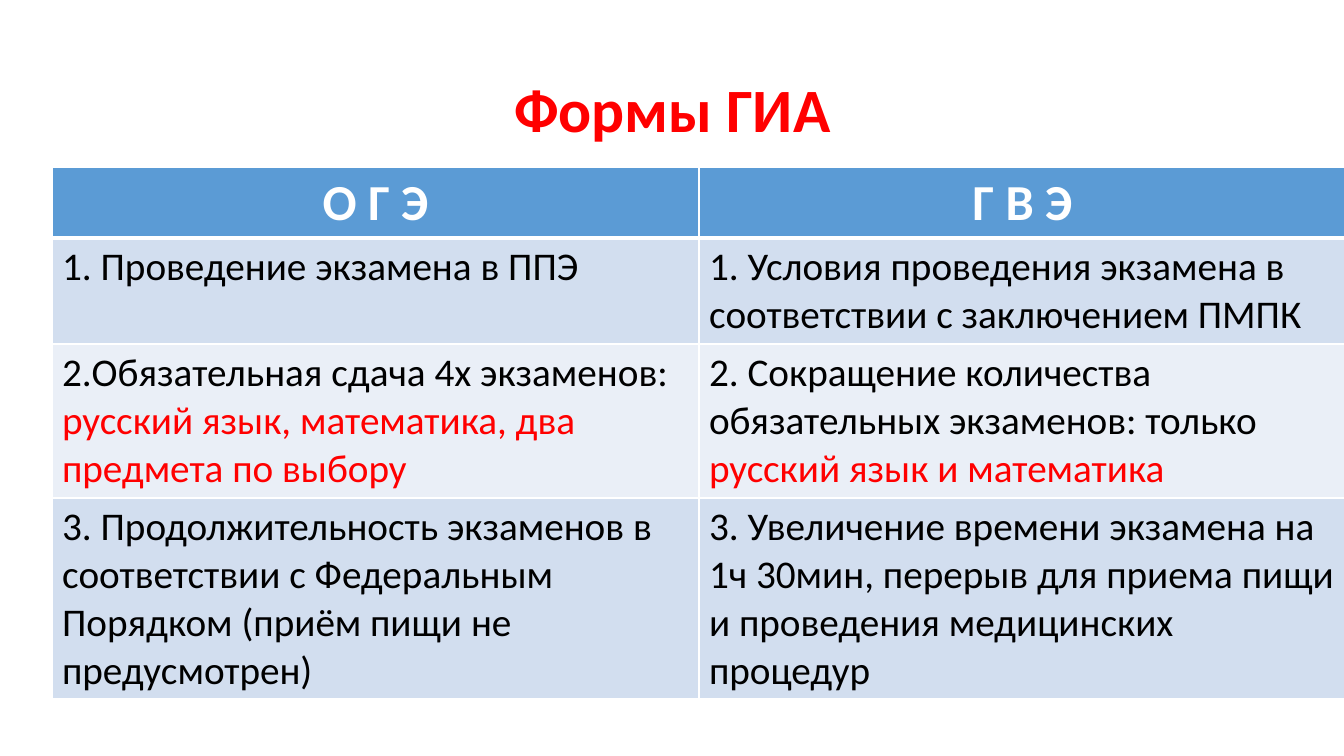
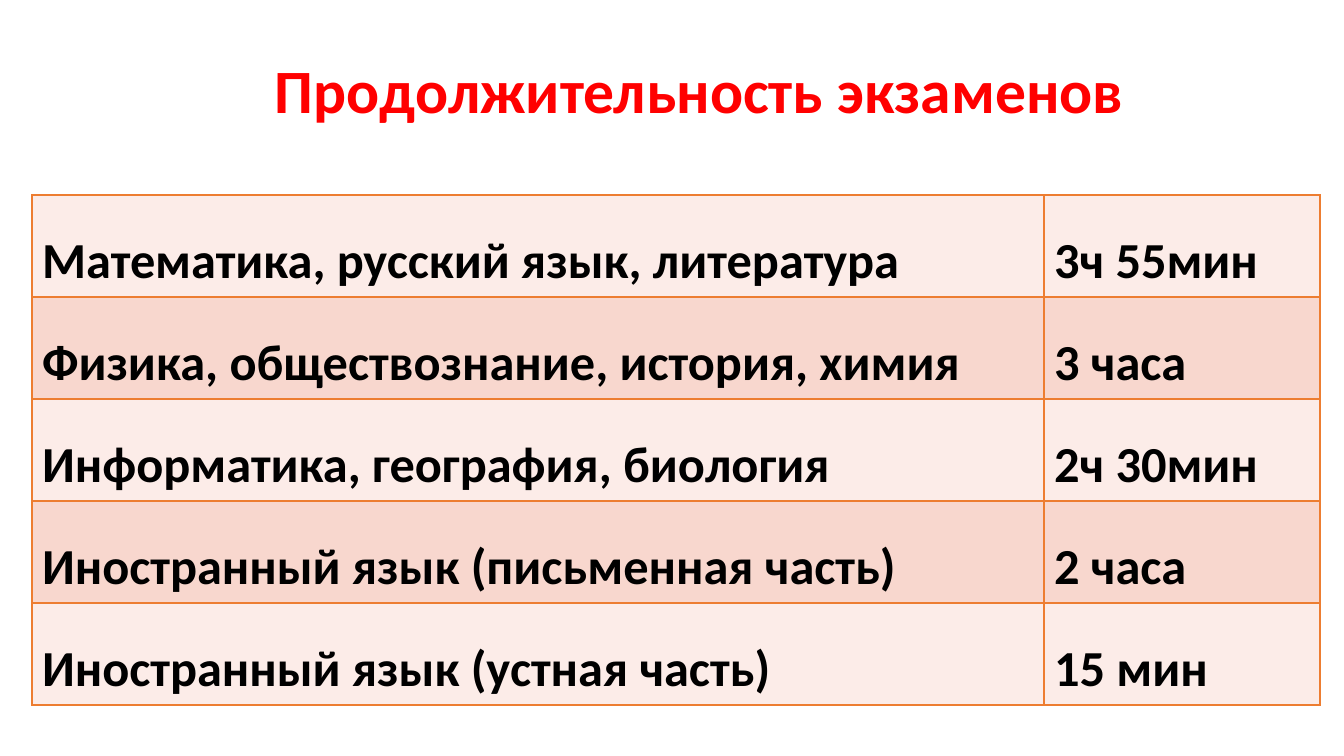
from dataclasses import dataclass

from lxml import etree
from pptx import Presentation
from pptx.dml.color import RGBColor
from pptx.enum.text import MSO_ANCHOR, PP_ALIGN
from pptx.oxml.ns import qn
from pptx.util import Pt

LEFT, CENTER = PP_ALIGN.LEFT, PP_ALIGN.CENTER
MIDDLE = MSO_ANCHOR.MIDDLE
SLIDE_WIDTH, SLIDE_HEIGHT = 1344, 756
EMU_PER_PX = 12192000 / SLIDE_WIDTH
EMU_PER_POINT = 12700
BLANK_LAYOUT = 6


@dataclass(frozen=True)
class Theme:
    font: str = "Calibri"
    accent: str = "FF0000"
    text: str = "000000"
    white: str = "FFFFFF"
    header_fill: str = "5B9BD5"
    blue_bands: tuple = ("D2DEEF", "EAEFF7")
    orange_bands: tuple = ("FCECE8", "F8D7CE")
    orange_line: str = "ED7D31"
    title_size: int = 44
    large_size: int = 36
    body_size: int = 28
    thin_line: int = 1
    thick_line: int = 3


THEME = Theme()

FORMS_HEADER = ("О Г Э", "Г В Э")
# Each cell is a list of (text, colour) runs.
FORMS_ROWS = [
    ([("1. Проведение экзамена в ППЭ", THEME.text)],
     [("1. Условия проведения экзамена в соответствии с заключением ПМПК", THEME.text)]),
    ([("2.Обязательная сдача 4х экзаменов: ", THEME.text),
      ("русский язык, математика, два предмета по выбору", THEME.accent)],
     [("2. Сокращение количества обязательных экзаменов: только ", THEME.text),
      ("русский язык и математика", THEME.accent)]),
    ([("3. Продолжительность экзаменов в соответствии с Федеральным Порядком "
       "(приём пищи не предусмотрен)", THEME.text)],
     [("3. Увеличение времени экзамена на 1ч 30мин, перерыв для приема пищи "
       "и проведения медицинских процедур", THEME.text)]),
]
DURATIONS = [
    ("Математика, русский язык, литература", "3ч 55мин"),
    ("Физика, обществознание, история, химия", "3 часа"),
    ("Информатика, география, биология", "2ч 30мин"),
    ("Иностранный язык (письменная часть)", "2 часа"),
    ("Иностранный язык (устная часть)", "15 мин"),
]


def px(length):
    return round(length * EMU_PER_PX)


def write_runs(paragraph, runs, size, bold, align=LEFT, spacing=1.0):
    paragraph.alignment = align
    paragraph.line_spacing = spacing
    for text, color in runs:
        run = paragraph.add_run()
        run.text = text
        run.font.name = THEME.font
        run.font.size = Pt(size)
        run.font.bold = bold
        run.font.color.rgb = RGBColor.from_string(color)


def add_title(slide, box, text, align):
    shape = slide.shapes.add_textbox(*map(px, box))
    frame = shape.text_frame
    frame.word_wrap = True
    frame.vertical_anchor = MIDDLE
    write_runs(frame.paragraphs[0], [(text, THEME.accent)], THEME.title_size, True, align, 0.9)


def set_borders(cell, color, top=THEME.thin_line, bottom=THEME.thin_line):
    """Draw the four borders; the lines must precede the fill in the cell properties."""
    properties = cell._tc.get_or_add_tcPr()
    widths = {"lnL": THEME.thin_line, "lnR": THEME.thin_line, "lnT": top, "lnB": bottom}
    for index, (side, width) in enumerate(widths.items()):
        line = etree.Element(qn(f"a:{side}"), w=str(width * EMU_PER_POINT))
        fill = etree.SubElement(line, qn("a:solidFill"))
        etree.SubElement(fill, qn("a:srgbClr"), val=color)
        properties.insert(index, line)


def add_grid(slide, left, top, columns, rows):
    """Add an unbanded table from column widths and row heights."""
    box = (left, top, sum(columns), sum(rows))
    table = slide.shapes.add_table(len(rows), len(columns), *map(px, box)).table
    table.first_row = table.horz_banding = False
    for column, width in zip(table.columns, columns):
        column.width = px(width)
    for row, height in zip(table.rows, rows):
        row.height = px(height)
    return table


def fill_cell(cell, runs, fill, size, bold, align=LEFT, spacing=1.0):
    cell.fill.solid()
    cell.fill.fore_color.rgb = RGBColor.from_string(fill)
    write_runs(cell.text_frame.paragraphs[0], runs, size, bold, align, spacing)


def add_forms_table(slide, left, top):
    table = add_grid(slide, left, top, [647, 647], [71, 106, 154, 201])
    for column, label in enumerate(FORMS_HEADER):
        cell = table.cell(0, column)
        fill_cell(cell, [(label, THEME.white)], THEME.header_fill,
                  THEME.large_size, True, CENTER)
        set_borders(cell, THEME.white, bottom=THEME.thick_line)
    for row, cells in enumerate(FORMS_ROWS, start=1):
        line_above = THEME.thick_line if row == 1 else THEME.thin_line
        for column, runs in enumerate(cells):
            cell = table.cell(row, column)
            fill_cell(cell, runs, THEME.blue_bands[(row - 1) % 2], THEME.body_size, False)
            set_borders(cell, THEME.white, top=line_above)


def add_durations_table(slide, left, top):
    table = add_grid(slide, left, top, [1012, 276], [102] * len(DURATIONS))
    for row, labels in enumerate(DURATIONS):
        for column, label in enumerate(labels):
            cell = table.cell(row, column)
            fill_cell(cell, [(label, THEME.text)], THEME.orange_bands[row % 2],
                      THEME.large_size, True, spacing=1.5)
            set_borders(cell, THEME.orange_line)


def add_blank_slide(presentation):
    return presentation.slides.add_slide(presentation.slide_layouts[BLANK_LAYOUT])


def build_forms_slide(presentation):
    slide = add_blank_slide(presentation)
    add_title(slide, (93, 40, 1159, 146), "Формы ГИА", CENTER)
    add_forms_table(slide, 52, 167)


def build_durations_slide(presentation):
    slide = add_blank_slide(presentation)
    add_title(slide, (265, 21, 1055, 146), "Продолжительность экзаменов", LEFT)
    add_durations_table(slide, 32, 195)


def main():
    presentation = Presentation()
    presentation.slide_width = px(SLIDE_WIDTH)
    presentation.slide_height = px(SLIDE_HEIGHT)
    build_forms_slide(presentation)
    build_durations_slide(presentation)
    presentation.save("out.pptx")


if __name__ == "__main__":
    main()
